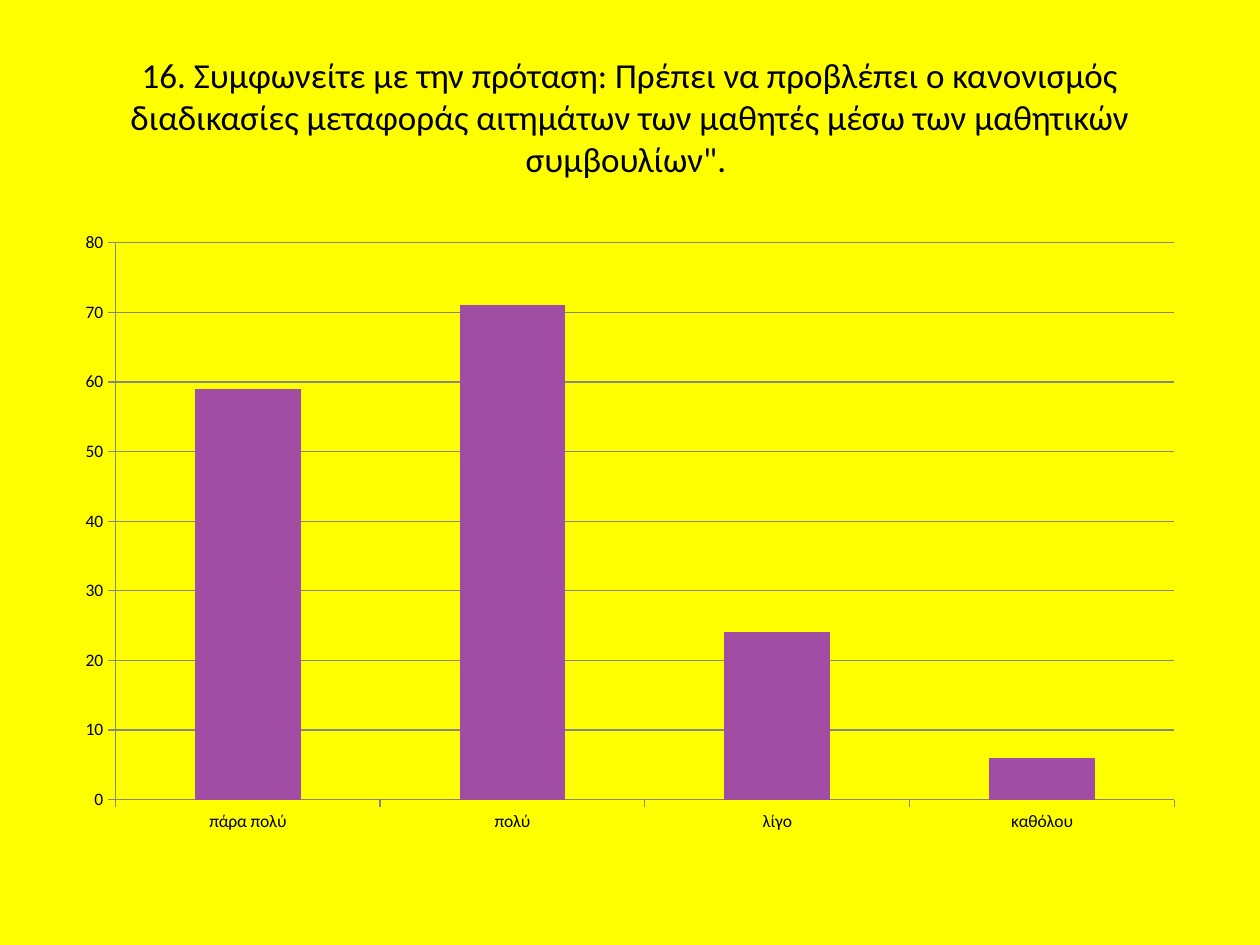
from pptx import Presentation
from pptx.chart.data import CategoryChartData
from pptx.dml.color import RGBColor
from pptx.enum.chart import XL_CHART_TYPE, XL_TICK_MARK
from pptx.enum.text import MSO_ANCHOR, PP_ALIGN
from pptx.util import Pt

COLUMNS = XL_CHART_TYPE.COLUMN_CLUSTERED
OUTSIDE = XL_TICK_MARK.OUTSIDE
MIDDLE = MSO_ANCHOR.MIDDLE
CENTER = PP_ALIGN.CENTER

QUESTION = (
    "16. Συμφωνείτε με την πρόταση: Πρέπει να προβλέπει ο κανονισμός "
    "διαδικασίες μεταφοράς αιτημάτων των μαθητές μέσω των μαθητικών "
    'συμβουλίων". '
)
ANSWERS = {"πάρα πολύ": 59, "πολύ": 71, "λίγο": 24, "καθόλου": 6}

THEME = {
    "font": "Calibri",
    "title_size": 20,
    "chart_size": 10,
    "background": "FFFF00",
    "text": "000000",
    "bar": "A04DA3",
    "line": "878787",
}
PAGE_WIDTH, PAGE_HEIGHT = 720, 540
MARGIN = 36
CONTENT_WIDTH = PAGE_WIDTH - 2 * MARGIN
TITLE_TOP, TITLE_HEIGHT = 21.6, 90
CHART_TOP, CHART_HEIGHT = 126, 356.4


def color(name):
    return RGBColor.from_string(THEME[name])


def set_font(font, size):
    font.name = THEME["font"]
    font.size = Pt(THEME[size])
    font.bold = False
    font.color.rgb = color("text")


def set_line(line):
    line.width = Pt(0.75)
    line.color.rgb = color("line")


def add_text(page, text, *, left, top, width, height, size, align):
    box = page.shapes.add_textbox(Pt(left), Pt(top), Pt(width), Pt(height))
    frame = box.text_frame
    frame.word_wrap = True
    frame.vertical_anchor = MIDDLE
    para = frame.paragraphs[0]
    para.alignment = align
    span = para.add_run()
    span.text = text
    set_font(span.font, size)


def add_answer_chart(page):
    data = CategoryChartData()
    data.categories = list(ANSWERS)
    data.add_series("Series 1", list(ANSWERS.values()))
    chart = page.shapes.add_chart(
        COLUMNS, Pt(MARGIN), Pt(CHART_TOP), Pt(CONTENT_WIDTH), Pt(CHART_HEIGHT), data
    ).chart
    chart.has_title = False
    chart.has_legend = False
    set_font(chart.font, "chart_size")

    plot = chart.plots[0]
    plot.vary_by_categories = False
    plot.gap_width = 150
    fill = plot.series[0].format.fill
    fill.solid()
    fill.fore_color.rgb = color("bar")

    for axis in (chart.category_axis, chart.value_axis):
        axis.major_tick_mark = OUTSIDE
        set_line(axis.format.line)
    scale = chart.value_axis
    scale.minimum_scale, scale.maximum_scale, scale.major_unit = 0, 80, 10
    scale.has_major_gridlines = True
    set_line(scale.major_gridlines.format.line)


def main():
    deck = Presentation()
    deck.slide_width, deck.slide_height = Pt(PAGE_WIDTH), Pt(PAGE_HEIGHT)
    page = deck.slides.add_slide(deck.slide_layouts[6])
    page.background.fill.solid()
    page.background.fill.fore_color.rgb = color("background")
    add_text(page, QUESTION, left=MARGIN, top=TITLE_TOP, width=CONTENT_WIDTH,
             height=TITLE_HEIGHT, size="title_size", align=CENTER)
    add_answer_chart(page)
    deck.save("out.pptx")


if __name__ == "__main__":
    main()
